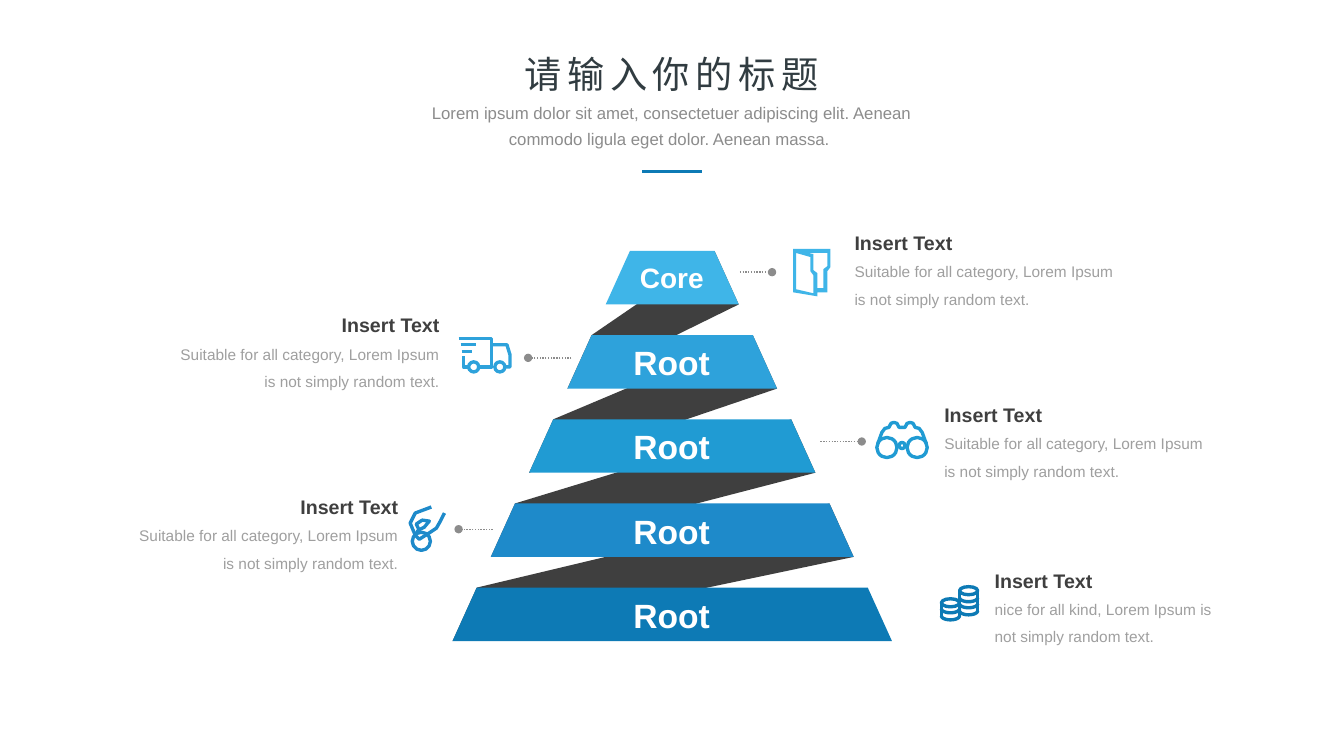
from math import cos, pi, sin

from lxml import etree
from pptx import Presentation
from pptx.dml.color import RGBColor
from pptx.enum.dml import MSO_LINE
from pptx.enum.shapes import MSO_CONNECTOR, MSO_SHAPE
from pptx.enum.text import MSO_ANCHOR, MSO_AUTO_SIZE, PP_ALIGN
from pptx.oxml.ns import qn
from pptx.util import Cm, Pt

WHITE = RGBColor(0xFF, 0xFF, 0xFF)
DARK = RGBColor(0x3F, 0x3F, 0x3F)
TITLE_INK = RGBColor(0x31, 0x3C, 0x41)
GRAY = RGBColor(0x8C, 0x8C, 0x8C)
LIGHT_GRAY = RGBColor(0x9F, 0x9F, 0x9F)
BLUES = [
    RGBColor(0x3F, 0xB5, 0xE8),
    RGBColor(0x2E, 0xA2, 0xDB),
    RGBColor(0x20, 0x9B, 0xD3),
    RGBColor(0x1E, 0x8A, 0xCA),
    RGBColor(0x0D, 0x7A, 0xB5),
]
LEFT, CENTER, RIGHT = PP_ALIGN.LEFT, PP_ALIGN.CENTER, PP_ALIGN.RIGHT
FILLER = "Suitable for all category, Lorem Ipsum is not simply random text."
CALLOUTS = [
    (8.38, 2.24, 2.78, LEFT, FILLER),
    (1.61, 3.06, 2.85, RIGHT, FILLER),
    (9.27, 3.95, 2.81, LEFT, FILLER),
    (1.26, 4.86, 2.79, RIGHT, FILLER),
    (9.77, 5.59, 2.53, LEFT, "nice for all kind, Lorem Ipsum is not simply random text."),
]
LEADERS = [(7.34, 7.66, 2.7), (5.67, 5.24, 3.55), (8.14, 8.55, 4.38), (4.89, 4.55, 5.25)]
DOOR = [
    [(8.24, 2.47), (7.87, 2.47), (7.87, 2.9), (8.11, 2.94), (8.11, 2.9), (8.21, 2.9),
     (8.21, 2.69), (8.24, 2.65)],
    [(8.07, 2.91), (7.9, 2.87), (7.9, 2.51), (8.04, 2.55), (8.04, 2.69), (8.07, 2.73)],
    [(8.17, 2.67), (8.17, 2.86), (8.11, 2.86), (8.11, 2.71), (8.07, 2.68), (8.07, 2.52),
     (8.02, 2.51), (8.21, 2.51), (8.21, 2.64)],
]
TRUCK = [
    [(4.55, 3.36), (4.88, 3.36), (4.88, 3.64), (4.75, 3.64)],
    [(4.65, 3.64), (4.6, 3.64), (4.6, 3.53)],
    [(4.88, 3.42), (5.03, 3.42), (5.06, 3.52), (5.06, 3.64), (5.01, 3.64)],
    [(4.57, 3.42), (4.72, 3.42)],
    [(4.58, 3.49), (4.68, 3.49)],
]
BINOCULARS = [
    [(8.71, 4.4), (8.75, 4.29), (8.78, 4.25), (8.82, 4.24), (8.84, 4.2), (8.87, 4.19),
     (8.9, 4.2), (8.92, 4.24), (8.98, 4.24), (9, 4.2), (9.03, 4.19), (9.06, 4.2),
     (9.08, 4.24), (9.12, 4.25), (9.15, 4.29), (9.19, 4.4)],
]
HAND = [
    [(4.12, 5.31), (4.07, 5.19), (4.12, 5.09), (4.28, 5.03)],
    [(4.41, 5.09), (4.37, 5.17), (4.33, 5.24), (4.24, 5.3), (4.16, 5.35), (4.12, 5.31),
     (4.15, 5.26), (4.21, 5.23), (4.26, 5.17), (4.19, 5.16), (4.13, 5.2), (4.15, 5.24)],
]


def inch(value):
    """Turn a position on the inch grid into a length."""
    return Cm(value * 2.54)


class PyramidSlide:
    """Hold the style and the current slide."""

    font = "Arial"
    stroke_width = Pt(2.4)

    def __init__(self, presentation):
        self.slide = presentation.slides.add_slide(presentation.slide_layouts[5])
        self.shapes = self.slide.shapes

    def set_text(self, shape, text, size, color, align=LEFT, bold=False, spacing=None, wrap=True):
        """Fill a shape with one styled paragraph."""
        frame = shape.text_frame
        frame.text = text
        frame.word_wrap = wrap
        frame.auto_size = MSO_AUTO_SIZE.NONE
        frame.vertical_anchor = MSO_ANCHOR.TOP
        paragraph = frame.paragraphs[0]
        paragraph.alignment = align
        paragraph.line_spacing = spacing
        paragraph.font.name = self.font
        paragraph.font.size = Pt(size)
        paragraph.font.bold = bold
        paragraph.font.color.rgb = color
        return paragraph

    def title(self, text, left, top, width, height):
        """Place the title with wide letter spacing."""
        shape = self.shapes.title
        shape.left, shape.top = inch(left), inch(top)
        shape.width, shape.height = inch(width), inch(height)
        paragraph = self.set_text(shape, text, 26.6, TITLE_INK, CENTER, spacing=0.8, wrap=False)
        paragraph.runs[0]._r.get_or_add_rPr().set("spc", "400")

    def text(self, text, left, top, width, height, size, color, **style):
        """Add a text box."""
        box = self.shapes.add_textbox(inch(left), inch(top), inch(width), inch(height))
        self.set_text(box, text, size, color, **style)

    def outline(self, contours, closed=True):
        """Build a freeform from lists of points."""
        builder = None
        for contour in contours:
            first, *others = [(inch(x), inch(y)) for x, y in contour]
            if builder is None:
                builder = self.shapes.build_freeform(*first)
            else:
                builder.move_to(*first)
            builder.add_line_segments(others, close=closed)
        shape = builder.convert_to_shape()
        shape.shadow.inherit = False
        return shape

    def area(self, contours, color):
        """Add a filled outline without a border."""
        shape = self.outline(contours)
        shape.fill.solid()
        shape.fill.fore_color.rgb = color
        shape.line.fill.background()

    def draw_stroke(self, shape, color):
        """Leave only the border of an icon part."""
        shape.fill.background()
        shape.line.color.rgb = color
        shape.line.width = self.stroke_width

    def strokes(self, contours, color):
        """Add open icon strokes."""
        self.draw_stroke(self.outline(contours, closed=False), color)

    def ring(self, x, y, width, height, color):
        """Add an icon ring around a centre."""
        shape = self.shapes.add_shape(MSO_SHAPE.OVAL, inch(x - width / 2), inch(y - height / 2),
                                      inch(width), inch(height))
        shape.shadow.inherit = False
        self.draw_stroke(shape, color)

    def coin_stack(self, x, top, rims, color):
        """Add a stack of coins with a lower rim for each."""
        radius = 0.09
        self.ring(x, top, 2 * radius, 0.08, color)
        angles = [pi * step / 12 for step in range(13)]
        arcs = [[(x + radius * cos(a), rim + 0.04 * sin(a)) for a in angles] for rim in rims]
        sides = [[(x + side, top), (x + side, rims[-1])] for side in (-radius, radius)]
        self.strokes(arcs + sides, color)

    def line(self, start, end, y, color, width, dotted=False):
        """Add a level line, or a dotted leader with a round end."""
        connector = self.shapes.add_connector(MSO_CONNECTOR.STRAIGHT, inch(start), inch(y),
                                              inch(end), inch(y))
        connector.line.color.rgb = color
        connector.line.width = Pt(width)
        properties = connector._element.spPr
        if dotted:
            connector.line.dash_style = MSO_LINE.ROUND_DOT
            etree.SubElement(properties.find(qn("a:ln")), qn("a:tailEnd"), type="oval")
        etree.SubElement(properties, qn("a:effectLst"))

    def pyramid(self):
        """Add the folded ribbon, the tiers and their labels."""
        center, tier_height, slant = 6.67, 0.53, 0.24
        tiers = []
        for level in range(len(BLUES)):
            top, half = 2.49 + 3.34 * level / 4, 0.66 + 0.38 * level
            bottom = top + tier_height
            tiers.append([(center - half + slant, top), (center + half - slant, top),
                          (center + half, bottom), (center - half, bottom)])
        for upper, lower in reversed(list(zip(tiers, tiers[1:]))):
            self.area([[upper[1], lower[0], lower[3], upper[2]]], DARK)
        for level, (tier, color) in enumerate(zip(tiers, BLUES)):
            self.area([tier], color)
            label, size, height = ("Root", 24, 0.5) if level else ("Core", 20, 0.44)
            self.text(label, center - 0.49, tier[0][1] + 0.27 - height / 2, 0.97, height,
                      size, WHITE, align=CENTER, bold=True, wrap=False)

    def callout(self, left, top, width, align, text):
        """Add a heading with its description."""
        self.text("Insert Text", left, top, width, 0.34, 14, DARK, align=align, bold=True)
        self.text(text, left, top + 0.22, width, 0.62, 11, LIGHT_GRAY, align=align, spacing=1.5)

    def icons(self):
        """Add one icon for each tier."""
        door, truck, binoculars, hand, coins = BLUES
        self.area(DOOR, door)
        self.strokes(TRUCK, truck)
        for x in (4.7, 4.96):
            self.ring(x, 3.64, 0.1, 0.1, truck)
        self.strokes(BINOCULARS, binoculars)
        for x, y, size in ((8.8, 4.44, 0.2), (9.1, 4.44, 0.2), (8.95, 4.42, 0.06)):
            self.ring(x, y, size, size, binoculars)
        self.strokes(HAND, hand)
        self.ring(4.18, 5.37, 0.18, 0.18, hand)
        self.coin_stack(9.61, 5.86, (5.93, 5.99, 6.06), coins)
        self.coin_stack(9.43, 5.98, (6.04, 6.11), coins)


def main():
    """Build the slide and save it."""
    presentation = Presentation()
    presentation.slide_width, presentation.slide_height = Cm(33.87), Cm(19.05)
    page = PyramidSlide(presentation)
    page.title("请输入你的标题", 5.06, 0.54, 3.21, 0.46)
    page.text("Lorem ipsum dolor sit amet, consectetuer adipiscing elit. "
              "Aenean commodo ligula eget dolor. Aenean massa. ",
              4.04, 0.91, 5.25, 0.6, 12, GRAY, align=CENTER, spacing=1.3)
    page.line(6.37, 6.97, 1.7, BLUES[-1], 2)
    page.pyramid()
    for start, end, y in LEADERS:
        page.line(start, end, y, GRAY, 1, dotted=True)
    for callout in CALLOUTS:
        page.callout(*callout)
    page.icons()
    presentation.save("out.pptx")


if __name__ == "__main__":
    main()
